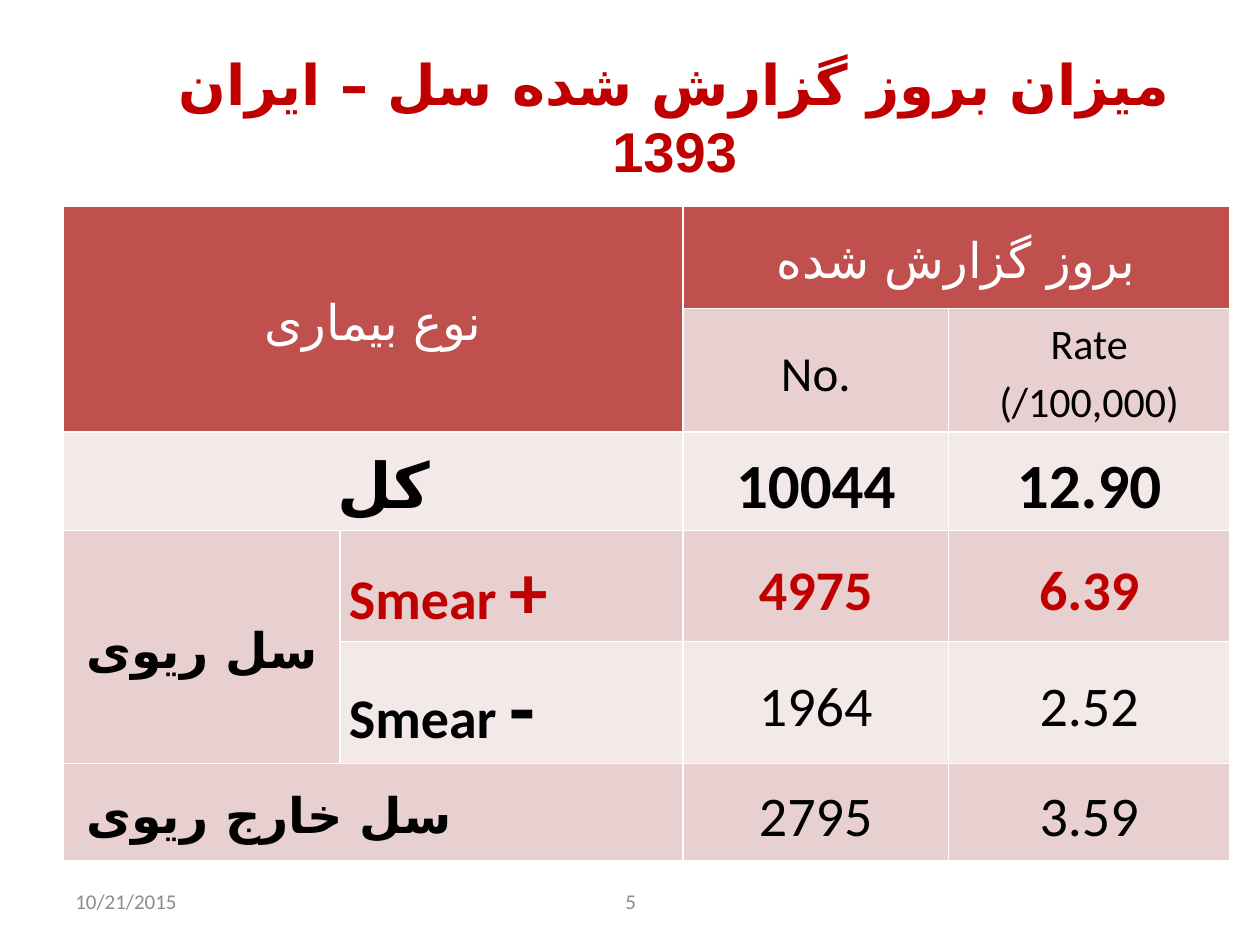
from pptx import Presentation
from pptx.dml.color import RGBColor as RGB
from pptx.enum.text import MSO_ANCHOR as Anchor, PP_ALIGN as Align
from pptx.oxml.ns import qn
from pptx.util import Inches, Pt
from lxml.etree import SubElement as Sub

THEME = dict(
    font="Calibri", script="DejaVu Sans", digit="Arial",
    head="C0504D", dark="E8D0D0", pale="F4E9E9",
    white="FFFFFF", black="000000", red="C00000", gray="8C8C8C",
    note=12, unit=24, label=28, value=32, total=36, plus=44, minus=48)

TITLE = ["میزان بروز گزارش شده سل – ایران ", "1393"]
DATE, PAGE = ["10/21/2015"], ["5"]
COLS = [2.2, 2.72, 2.11, 2.23]
ROWS = [0.81, 0.98, 0.78, 0.88, 0.97, 0.77]

HEAD = dict(size="label", color="white", center=True)
SUB = dict(size="label", center=True)
TOTAL = dict(size="total", bold=True, center=True)
NUM = dict(size="value", center=True)
HOT = dict(NUM, bold=True, color="red")
NAME = dict(size="label", bold=True)

# row, column, rows spanned, columns spanned, fill, runs, format
CELLS = [
    (0, 0, 2, 2, "head", ["نوع بیماری"], HEAD),
    (0, 2, 1, 2, "head", ["بروز گزارش شده"], HEAD),
    (1, 2, 1, 1, "dark", ["No."], SUB),
    (1, 3, 1, 1, "dark", ["Rate (/100,000)"], dict(SUB, size="unit")),
    (2, 0, 1, 2, "pale", [" کل"], TOTAL),
    (2, 2, 1, 1, "pale", ["10044"], TOTAL),
    (2, 3, 1, 1, "pale", ["12.90"], TOTAL),
    (3, 0, 2, 1, "dark", [(" ", "unit"), "سل ریوی"], NAME),
    (3, 1, 1, 1, "dark", ["Smear ", ("+", "plus")], dict(HOT, center=False)),
    (3, 2, 1, 1, "dark", ["4975"], HOT),
    (3, 3, 1, 1, "dark", ["6.39"], HOT),
    (4, 1, 1, 1, "pale", ["Smear ", ("-", "minus")],
     dict(size="value", bold=True)),
    (4, 2, 1, 1, "pale", ["1964"], NUM),
    (4, 3, 1, 1, "pale", ["2.52"], NUM),
    (5, 0, 1, 2, "dark", [(" ", "unit"), "سل خارج ریوی"], NAME),
    (5, 2, 1, 1, "dark", ["2795"], NUM),
    (5, 3, 1, 1, "dark", ["3.59"], NUM),
]


def write(frame, runs, size, color="black", bold=False, center=False,
          space=1.0):
    """Fill a frame; a run is a string or a (string, size name) pair."""
    frame.word_wrap = True
    para = frame.paragraphs[0]
    para.alignment = Align.CENTER if center else Align.LEFT
    para.line_spacing = space
    for item in runs:
        text, key = (item, size) if isinstance(item, str) else item
        run = para.add_run()
        run.text = text
        font = run.font
        font.name, font.size, font.bold = THEME["font"], Pt(THEME[key]), bold
        font.color.rgb = RGB.from_string(THEME[color])
        face = THEME["digit" if text.isdigit() else "script"]
        Sub(run._r.get_or_add_rPr(), qn("a:cs"), typeface=face)


def label(slide, box, runs, **style):
    shape = slide.shapes.add_textbox(*map(Inches, box))
    shape.text_frame.vertical_anchor = Anchor.MIDDLE
    write(shape.text_frame, runs, **style)


def edge(cell):
    """Draw thin white borders, placed ahead of the cell's fill."""
    props = cell._tc.get_or_add_tcPr()
    for spot, tag in enumerate(["lnL", "lnR", "lnT", "lnB"]):
        line = Sub(props, qn("a:" + tag), w=str(Pt(1)))
        Sub(Sub(line, qn("a:solidFill")), qn("a:srgbClr"), val=THEME["white"])
        props.insert(spot, line)


def build(slide):
    frame = slide.shapes.add_table(
        len(ROWS), len(COLS), Inches(0.5), Inches(1.64),
        Inches(sum(COLS)), Inches(sum(ROWS)))
    table = frame.table
    for col, width in zip(table.columns, COLS):
        col.width = Inches(width)
    for row, height in zip(table.rows, ROWS):
        row.height = Inches(height)
    for top, left, down, wide, fill, runs, style in CELLS:
        cell = table.cell(top, left)
        if down * wide > 1:
            cell.merge(table.cell(top + down - 1, left + wide - 1))
        for r in range(top, top + down):
            for c in range(left, left + wide):
                part = table.cell(r, c)
                part.fill.solid()
                part.fill.fore_color.rgb = RGB.from_string(THEME[fill])
                edge(part)
        cell.margin_left = cell.margin_right = Inches(0.07)
        cell.margin_top = cell.margin_bottom = 0
        cell.vertical_anchor = Anchor.MIDDLE
        write(cell.text_frame, runs, space=1.15, **style)


def main():
    deck = Presentation()
    deck.slide_width, deck.slide_height = Inches(10), Inches(7.5)
    slide = deck.slides.add_slide(deck.slide_layouts[6])
    build(slide)
    label(slide, (0.94, 0.3, 8.83, 1.25), TITLE,
          size="value", color="red", bold=True, center=True)
    label(slide, (0.5, 6.95, 2.33, 0.4), DATE, size="note", color="gray")
    label(slide, (3.42, 6.95, 3.17, 0.4), PAGE,
          size="note", color="gray", center=True)
    deck.save("out.pptx")


if __name__ == "__main__":
    main()
